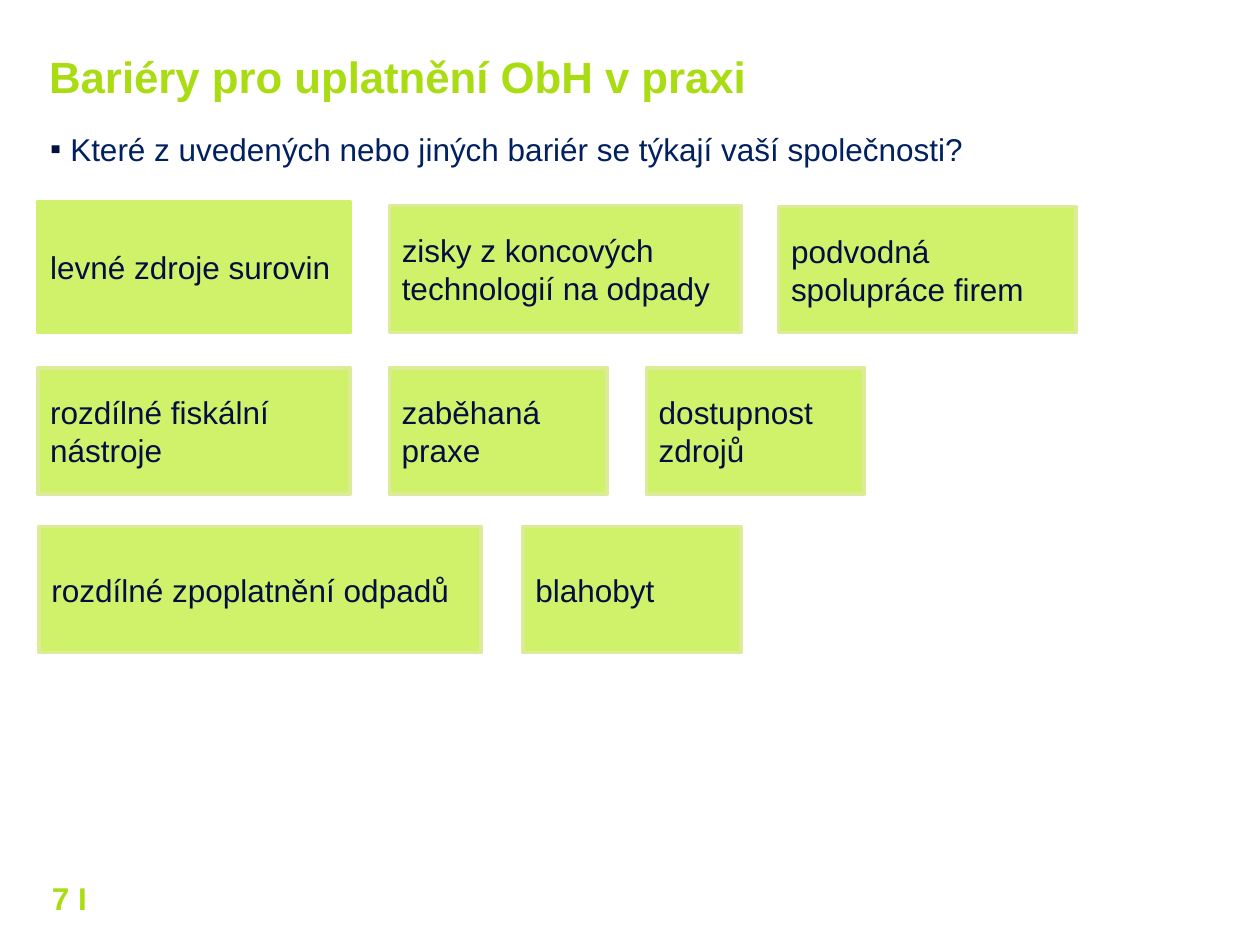
from lxml import etree
from pptx import Presentation
from pptx import util as u
from pptx.dml.color import RGBColor
from pptx.enum import shapes, text
from pptx.oxml.ns import qn

COLORS = {
    "accent": "AADC14",
    "question": "002060",
    "ink": "030F40",
    "fill": "D0F26A",
    "border": "DCEB97",
}
FONT = "Arial"
TITLE = "Bariéry pro uplatnění ObH v praxi"
QUESTION = "Které z uvedených nebo jiných bariér se týkají vaší společnosti?"
PAGE_NUMBER = "7 I"

BARRIER_ROWS = [
    (2.64, [
        ("levné zdroje surovin", 0.3, 2.48, 1.04, "fill"),
        ("zisky z koncových technologií na odpady", 3.09, 2.79, 1.01, "border"),
        ("podvodná spolupráce firem", 6.18, 2.36, 1, "border"),
    ]),
    (3.92, [
        ("rozdílné fiskální nástroje", 0.3, 2.48, 1, "border"),
        ("zaběhaná praxe", 3.09, 1.73, 1, "border"),
        ("dostupnost zdrojů", 5.13, 1.73, 1, "border"),
    ]),
    (5.18, [
        ("rozdílné zpoplatnění odpadů", 0.31, 3.51, 1, "border"),
        ("blahobyt", 4.15, 1.73, 1, "border"),
    ]),
]


def color(name):
    return RGBColor.from_string(COLORS[name])


def add_bullet(paragraph, character, color_name, indent):
    properties = paragraph._p.get_or_add_pPr()
    properties.set("marL", str(u.Inches(indent)))
    properties.set("indent", str(-u.Inches(indent)))
    bullet_color = etree.SubElement(properties, qn("a:buClr"))
    etree.SubElement(bullet_color, qn("a:srgbClr"), val=COLORS[color_name])
    etree.SubElement(properties, qn("a:buFont"), typeface=FONT)
    etree.SubElement(properties, qn("a:buChar"), char=character)


def write(shape, content, size=18, color_name="ink", bold=False,
          align=text.PP_ALIGN.LEFT, anchor=text.MSO_ANCHOR.TOP,
          margins=(0.1, 0.05, 0.1, 0.05), line_spacing=None,
          space_after=None, bullet=None):
    frame = shape.text_frame
    frame.word_wrap = True
    frame.auto_size = text.MSO_AUTO_SIZE.NONE
    frame.vertical_anchor = anchor
    (frame.margin_left, frame.margin_top,
     frame.margin_right, frame.margin_bottom) = map(u.Inches, margins)
    paragraph = frame.paragraphs[0]
    paragraph.text = content
    paragraph.alignment = align
    paragraph.space_before = u.Pt(0)
    if line_spacing is not None:
        paragraph.line_spacing = line_spacing
    if space_after is not None:
        paragraph.space_after = u.Pt(space_after)
    if bullet:
        add_bullet(paragraph, bullet, "ink", 0.16)
    font = paragraph.runs[0].font
    font.name = FONT
    font.size = u.Pt(size)
    font.bold = bold
    font.color.rgb = color(color_name)


def add_barrier(slide, content, left, bottom, width, height, border):
    box = slide.shapes.add_shape(
        shapes.MSO_SHAPE.RECTANGLE,
        *map(u.Inches, (left, bottom - height, width, height)))
    box.shadow.inherit = False
    box.fill.solid()
    box.fill.fore_color.rgb = color("fill")
    box.line.color.rgb = color(border)
    box.line.width = u.Pt(2)
    write(box, content, anchor=text.MSO_ANCHOR.MIDDLE)


def main():
    presentation = Presentation()
    presentation.slide_width = u.Inches(10)
    presentation.slide_height = u.Inches(7.5)
    slide = presentation.slides.add_slide(presentation.slide_layouts[5])

    title = slide.shapes.title
    title.left, title.top, title.width, title.height = map(
        u.Inches, (0.39, 0.44, 8.94, 1.53))
    write(title, TITLE, size=25, color_name="accent", bold=True,
          margins=(0, 0, 0, 0), line_spacing=0.9)

    page_number = slide.shapes.add_textbox(
        *map(u.Inches, (0, 6.98, 0.75, 0.51)))
    write(page_number, PAGE_NUMBER, color_name="accent", bold=True,
          align=text.PP_ALIGN.RIGHT, margins=(0, 0, 0.06, 0))

    question = slide.shapes.add_textbox(
        *map(u.Inches, (0.3, 0.98, 8.66, 5.4)))
    write(question, QUESTION, color_name="question", space_after=3.6, bullet="▪")

    for bottom, barriers in BARRIER_ROWS:
        for content, left, width, height, border in barriers:
            add_barrier(slide, content, left, bottom, width, height, border)

    presentation.save("out.pptx")


if __name__ == "__main__":
    main()
